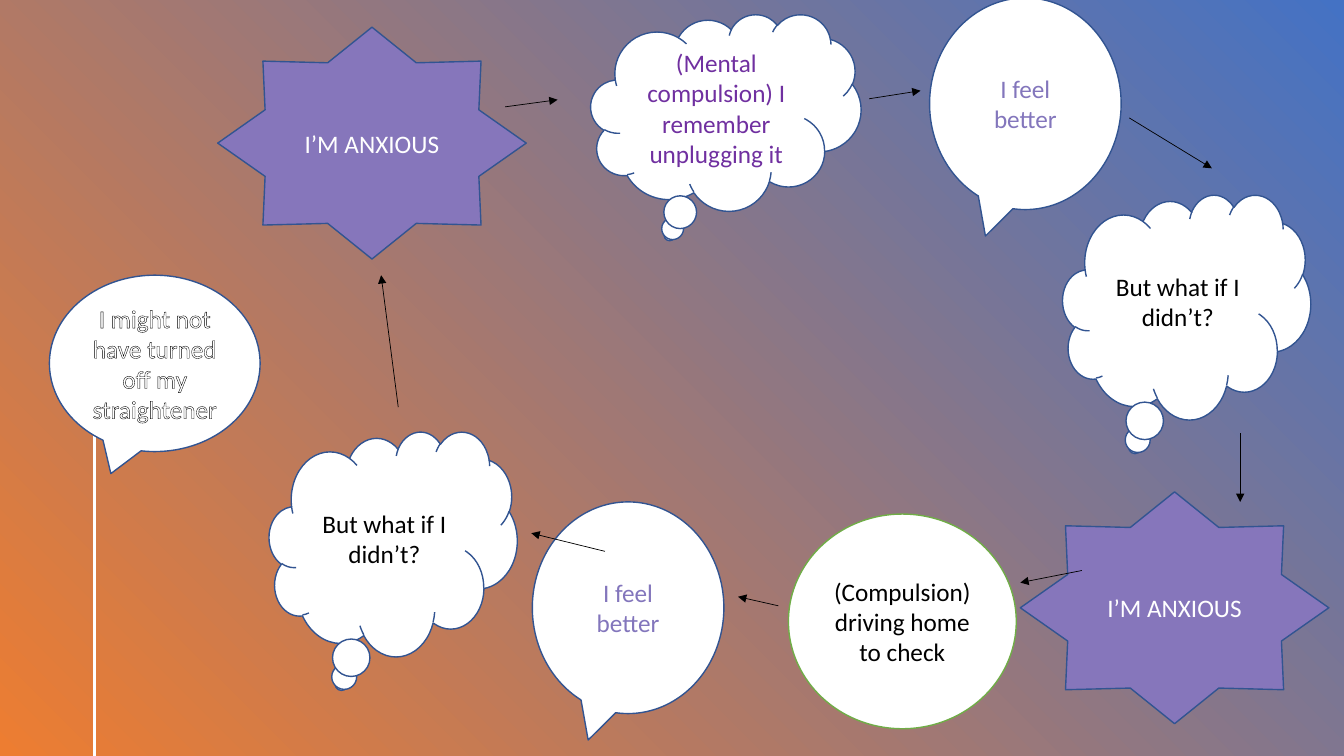
from lxml.etree import SubElement
from pptx import Presentation
from pptx.dml.color import RGBColor
from pptx.enum.shapes import MSO_CONNECTOR, MSO_SHAPE
from pptx.enum.text import MSO_ANCHOR, PP_ALIGN
from pptx.oxml import parse_xml
from pptx.oxml.ns import nsdecls, qn
from pptx.util import Inches, Pt

COLUMNS, ROWS = 133.3, 75
WHITE, BLACK, NAVY = "FFFFFF", "000000", "325491"
VIOLET, LAVENDER, PURPLE, GREEN = "8676BB", "8376BC", "7030A0", "70AD47"
STAR_SIZE, CLOUD_SIZE, SPEECH_SIZE = (30.6, 23), (24.6, 22.3), (19, 21)


def cells(count):
    """Turn grid cells of a tenth of an inch into a length."""
    return Inches(count / 10)


def color(hex_string):
    """Turn a hex string into a colour."""
    return RGBColor.from_string(hex_string)


def add_bubble(slide, box, kind, text, text_color=BLACK, fill=WHITE, line=NAVY):
    """Draw a filled shape with centred text in a box of grid cells."""
    shape = slide.shapes.add_shape(kind, *map(cells, box))
    shape.shadow.inherit = False
    shape.fill.solid()
    shape.fill.fore_color.rgb = color(fill)
    shape.line.color.rgb = color(line)
    shape.line.width = Pt(1)
    text_frame = shape.text_frame
    text_frame.text = text
    text_frame.word_wrap = True
    text_frame.vertical_anchor = MSO_ANCHOR.MIDDLE
    paragraph = text_frame.paragraphs[0]
    paragraph.alignment = PP_ALIGN.CENTER
    font = paragraph.runs[0].font
    font.name = "Calibri"
    font.size = Pt(18)
    font.color.rgb = color(text_color)
    return shape


def add_line(slide, start, end, line_color, width):
    """Draw a straight line between two grid points."""
    line = slide.shapes.add_connector(
        MSO_CONNECTOR.STRAIGHT, *map(cells, (*start, *end)))
    line.line.color.rgb = color(line_color)
    line.line.width = Pt(width)
    SubElement(line._element.spPr, qn("a:effectLst"))
    return line


def add_arrow(slide, start, end):
    """Draw a thin black arrow between two grid points."""
    arrow = add_line(slide, start, end, BLACK, 0.5)
    SubElement(arrow.line._get_or_add_ln(), qn("a:tailEnd"), type="triangle")


def add_background(slide, box):
    """Fill a box with the blue to orange gradient."""
    shape = slide.shapes.add_shape(MSO_SHAPE.RECTANGLE, *map(cells, box))
    shape.shadow.inherit = False
    shape.line.fill.background()
    shape.fill.gradient()
    shape.fill.gradient_angle = 225
    for stop, position, hex_string in zip(
            shape.fill.gradient_stops, (0, 1), ("4472C4", "ED7D31")):
        stop.position = position
        stop.color.rgb = color(hex_string)


def add_trigger(slide, box):
    """Draw the starting worry, with outlined text, on its stem."""
    left, top, width, height = box
    stem = left + 4.5
    add_line(slide, (stem, top + 11), (stem, ROWS), WHITE, 2)
    bubble = add_bubble(slide, (left, top, width, height), MSO_SHAPE.OVAL_CALLOUT,
                        "I might not have turned off my straightener", WHITE)
    run = bubble.text_frame.paragraphs[0].runs[0]
    outline = parse_xml(
        f'<a:ln {nsdecls("a")} w="{Pt(0.75)}"><a:solidFill>'
        f'<a:srgbClr val="{BLACK}"/></a:solidFill></a:ln>')
    run.font._element.insert(0, outline)


def add_cycle_half(slide, origin, compulsion, places, arrows):
    """Draw anxiety, compulsion, relief and doubt, then the arrows between them."""
    left, top = origin
    star, speech, cloud = places
    (column, row, width, height), kind, text, text_color, line = compulsion
    add_bubble(slide, (left + column, top + row, width, height), kind, text,
               text_color, line=line)
    for (column, row), size, kind, text, text_color, fill in (
        (star, STAR_SIZE, MSO_SHAPE.STAR_8_POINT, "I’M ANXIOUS", WHITE, VIOLET),
        (speech, SPEECH_SIZE, MSO_SHAPE.OVAL_CALLOUT, "I feel better", LAVENDER, WHITE),
        (cloud, CLOUD_SIZE, MSO_SHAPE.CLOUD_CALLOUT, "But what if I didn’t?", BLACK, WHITE),
    ):
        add_bubble(slide, (left + column, top + row, *size), kind, text, text_color, fill)
    for start, end in arrows:
        add_arrow(slide, (left + start[0], top + start[1]), (left + end[0], top + end[1]))


def main():
    """Build the anxiety cycle slide."""
    presentation = Presentation()
    presentation.slide_width = cells(COLUMNS)
    presentation.slide_height = cells(ROWS)
    slide = presentation.slides.add_slide(presentation.slide_layouts[6])
    add_background(slide, (0, 0, COLUMNS, ROWS))
    add_trigger(slide, (4.9, 27.3, 20.9, 17.5))
    add_cycle_half(
        slide, (21, 0),
        ((37.6, 1.4, 26.8, 19.5), MSO_SHAPE.CLOUD_CALLOUT,
         "(Mental compulsion) I remember unplugging it", PURPLE, NAVY),
        ((0.6, 2.7), (71.2, -0.2), (84.4, 19.3)),
        (((29.1, 10.6), (34.3, 9.9)), ((65.2, 9.8), (70.3, 9)),
         ((91, 11.7), (99.2, 16.7)), ((102, 43), (102, 49.8))))
    add_cycle_half(
        slide, (26, 42),
        ((52.2, 9, 22.6, 21.3), MSO_SHAPE.OVAL,
         "(Compulsion) driving home to check", BLACK, GREEN),
        ((75.2, 6.8), (26.8, 7.8), (0.7, 0.8)),
        (((81.3, 14.6), (75.2, 15.8)), ((51.2, 18.1), (47.2, 17.2)),
         ((34, 12.7), (26.7, 10.9)), ((13.5, -1.6), (11.8, -14.7))))
    presentation.save("out.pptx")


if __name__ == "__main__":
    main()
